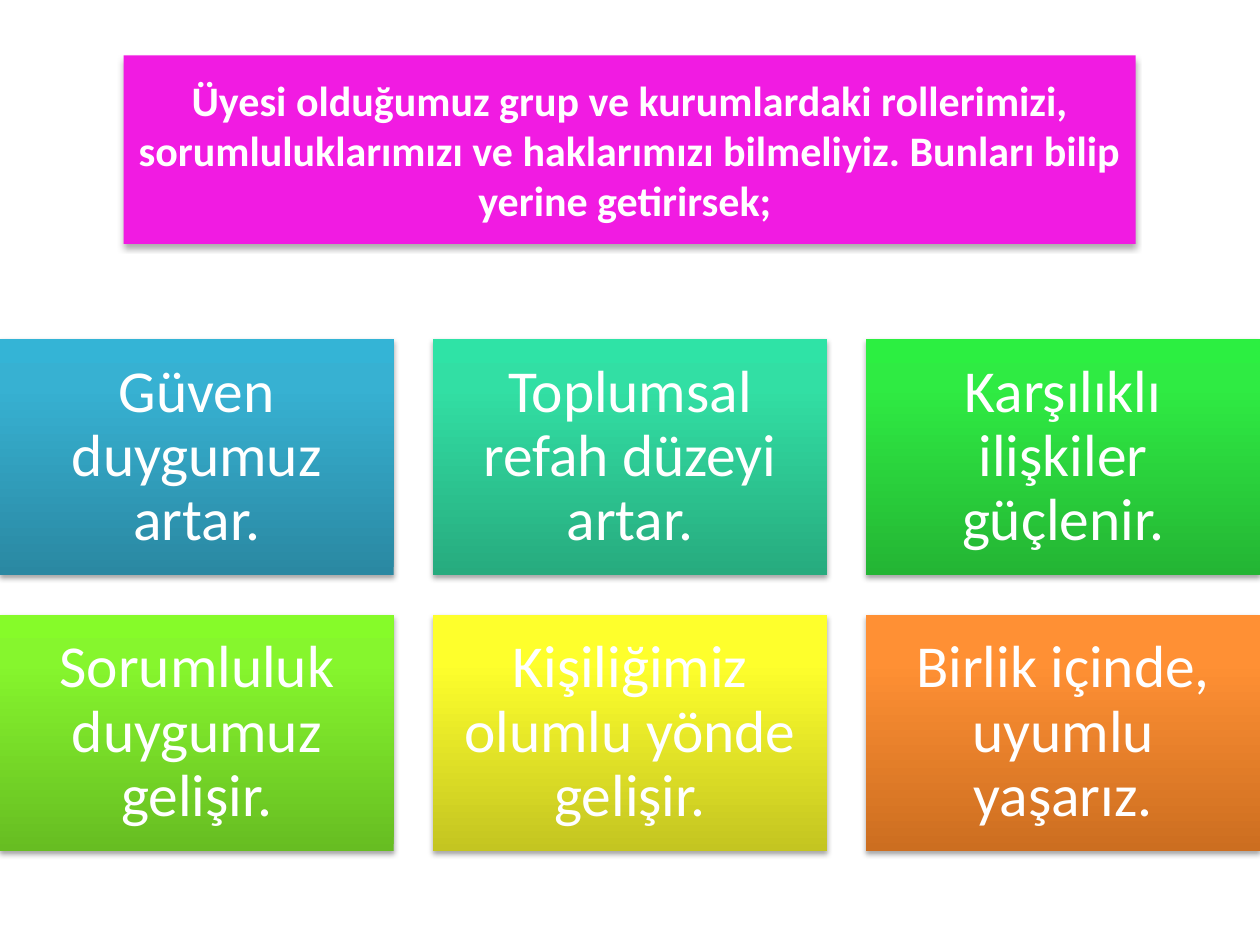
"""Build a slide with a heading banner above a grid of six benefit tiles."""
from pptx import Presentation
from pptx.dml.color import RGBColor
from pptx.enum.shapes import MSO_SHAPE
from pptx.enum.text import MSO_ANCHOR, MSO_AUTO_SIZE, PP_ALIGN
from pptx.oxml import parse_xml
from pptx.oxml.ns import nsdecls
from pptx.util import Pt

THEME = {
    "font": "Calibri",
    "text": RGBColor.from_string("FFFFFF"),
    "banner": RGBColor.from_string("F11BE2"),
    "shadow": "000000",
    "heading_size": Pt(24),
    "tile_size": Pt(34),
}
HEADING = (
    "Üyesi olduğumuz grup ve kurumlardaki rollerimizi, sorumluluklarımızı "
    "ve haklarımızı bilmeliyiz. Bunları bilip yerine getirirsek; "
)
TILES = [
    ("Güven duygumuz artar.", ("2A88A2", "37B1D2", "34B4D6")),
    ("Toplumsal refah düzeyi artar.", ("27AB7E", "32DFA4", "2FE3A6")),
    ("Karşılıklı ilişkiler güçlenir.", ("24B534", "2FEB43", "2CEF41")),
    ("Sorumluluk duygumuz gelişir.", ("67BD22", "86F62D", "86FB29")),
    ("Kişiliğimiz olumlu yönde gelişir.", ("C4C521", "FEFF2C", "FEFF2D")),
    ("Birlik içinde, uyumlu yaşarız.", ("CC6E20", "FF9034", "FF9136")),
]
STOP_POSITIONS = (0, 80, 100)
COLUMNS = 3
TILE_WIDTH, TILE_HEIGHT, TILE_GAP = 225, 135, 22.5
GRID_TOP = 193.75
TILE_INSET = Pt(10.2)


def add_shadow(shape, blur, distance, opacity):
    shape._element.spPr.append(parse_xml(
        f'<a:effectLst {nsdecls("a")}>'
        f'<a:outerShdw blurRad="{Pt(blur)}" dist="{Pt(distance)}" dir="5400000" rotWithShape="0">'
        f'<a:srgbClr val="{THEME["shadow"]}"><a:alpha val="{opacity * 1000}"/></a:srgbClr>'
        '</a:outerShdw></a:effectLst>'
    ))


def write_text(shape, text, size, bold):
    frame = shape.text_frame
    frame.text = text
    frame.word_wrap = True
    frame.auto_size = MSO_AUTO_SIZE.NONE
    frame.vertical_anchor = MSO_ANCHOR.MIDDLE
    paragraph = frame.paragraphs[0]
    paragraph.alignment = PP_ALIGN.CENTER
    font = paragraph.runs[0].font
    font.name = THEME["font"]
    font.size = size
    font.bold = bold
    font.color.rgb = THEME["text"]


presentation = Presentation()
presentation.slide_width, presentation.slide_height = Pt(720), Pt(540)
slide = presentation.slides.add_slide(presentation.slide_layouts[5])

banner = slide.shapes.title
banner.left, banner.top, banner.width, banner.height = Pt(70.6), Pt(31.7), Pt(578.4), Pt(107.7)
banner._element.spPr.append(parse_xml(
    f'<a:prstGeom {nsdecls("a")} prst="roundRect"><a:avLst/></a:prstGeom>'
))
banner.fill.solid()
banner.fill.fore_color.rgb = THEME["banner"]
banner.line.fill.background()
add_shadow(banner, 3.5, 2.2, 32)
write_text(banner, HEADING, THEME["heading_size"], True)

for index, (text, colors) in enumerate(TILES):
    row, column = divmod(index, COLUMNS)
    tile = slide.shapes.add_shape(
        MSO_SHAPE.RECTANGLE,
        Pt(column * (TILE_WIDTH + TILE_GAP)),
        Pt(GRID_TOP + row * (TILE_HEIGHT + TILE_GAP)),
        Pt(TILE_WIDTH),
        Pt(TILE_HEIGHT),
    )
    stops = "".join(
        f'<a:gs pos="{position * 1000}"><a:srgbClr val="{color}"/></a:gs>'
        for position, color in zip(STOP_POSITIONS, colors)
    )
    tile._element.spPr.prstGeom.addnext(parse_xml(
        f'<a:gradFill {nsdecls("a")} rotWithShape="1"><a:gsLst>{stops}</a:gsLst>'
        '<a:lin ang="16200000" scaled="0"/></a:gradFill>'
    ))
    tile.line.fill.background()
    add_shadow(tile, 3.1, 1.8, 35)
    write_text(tile, text, THEME["tile_size"], False)
    frame = tile.text_frame
    frame.margin_left = frame.margin_right = TILE_INSET
    frame.margin_top = frame.margin_bottom = TILE_INSET
    frame.paragraphs[0].line_spacing = 0.9
    frame.paragraphs[0].space_after = Pt(12)

presentation.save("out.pptx")
